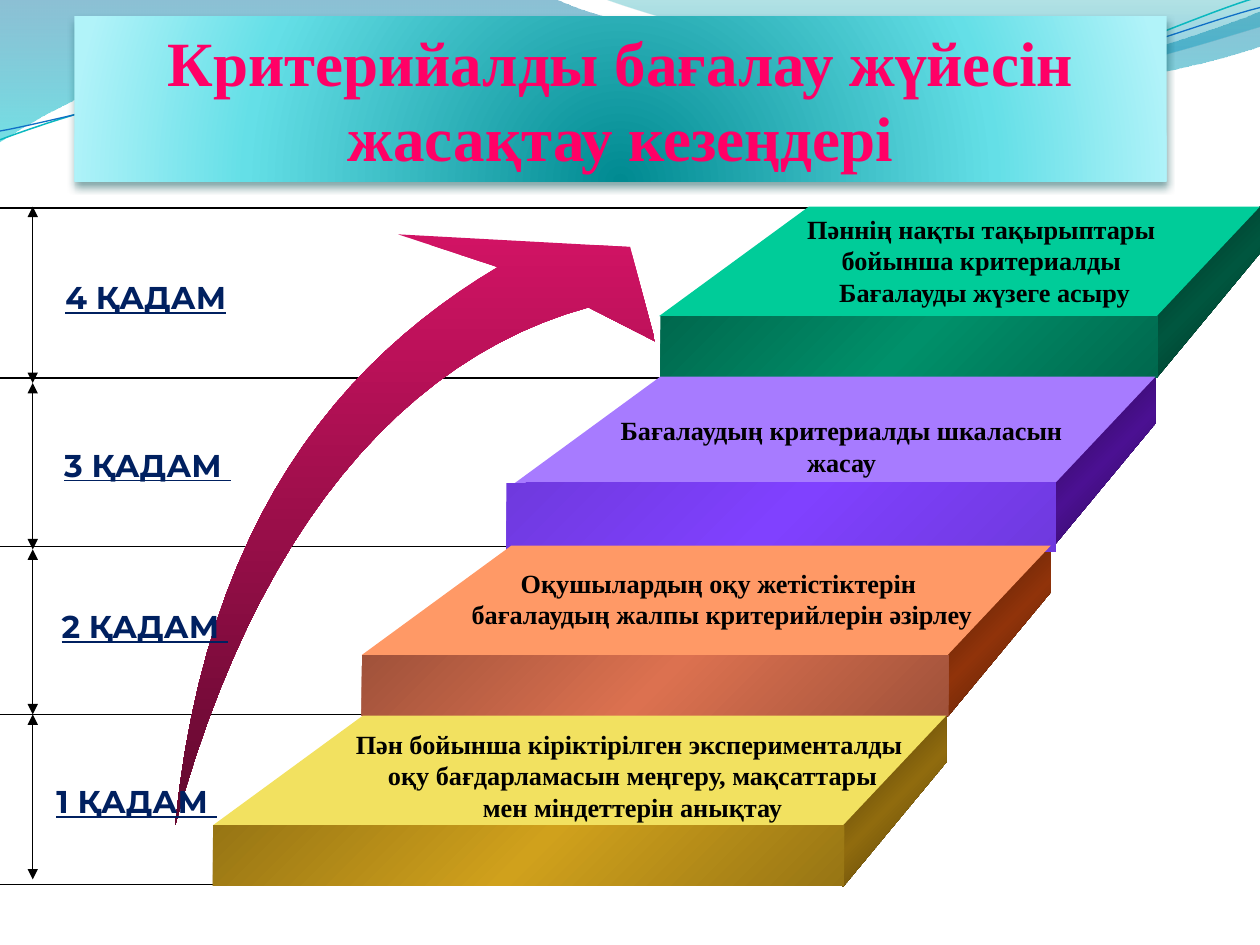
import pptx
import pptx.util
import pptx.dml.color
import pptx.enum.shapes
import pptx.enum.text
import pptx.oxml
import pptx.oxml.ns
from pptx.util import Inches

# ---- Content -------------------------------------------------------------
TITLE = "Критерийалды бағалау жүйесін жасақтау кезеңдері"
PANEL = (0.59, 0.13, 8.67, 1.31)

# From the highest step down: y is its back edge, box its front face,
# tag and note the places of its name and text
STEPS = [
    {"y": 1.64, "hue": "green", "box": (5.24, 2.51, 3.95, 0.49),
     "name": "4 ҚАДАМ", "tag": (0.42, 2.16, 1.59, 0.71),
     "note": (5.55, 1.64, 4.53, 0.86),
     "text": ["Пәннің нақты тақырыптары ", "бойынша критериалды ",
              "Бағалауды жүзеге асыру"]},
    {"y": 2.99, "hue": "violet", "box": (4.02, 3.83, 4.36, 0.55),
     "name": "3 ҚАДАМ ", "tag": (0.41, 3.49, 1.68, 0.71),
     "note": (4.65, 3.24, 4.06, 0.61),
     "text": ["Бағалаудың критериалды шкаласын жасау"]},
    {"y": 4.33, "hue": "orange", "box": (2.87, 5.2, 4.66, 0.48),
     "name": "2 ҚАДАМ ", "tag": (0.39, 4.77, 1.77, 0.4),
     "note": (3.23, 4.45, 5, 0.61),
     "text": ["Оқушылардың оқу жетістіктерін ",
              "бағалаудың жалпы критерийлерін әзірлеу"]},
    {"y": 5.68, "hue": "yellow", "box": (1.69, 6.55, 5.01, 0.48),
     "name": "1 ҚАДАМ ", "tag": (0.35, 6.16, 1.54, 0.4),
     "note": (2.3, 5.73, 5.39, 0.86),
     "text": ["Пән бойынша кіріктірілген эксперименталды",
              " оқу бағдарламасын меңгеру, мақсаттары",
              " мен міндеттерін анықтау"]},
]

# ---- Look: gradient stops are (place, colour, opacity) -------------------
THEME = {
    "head": ("Times New Roman", 36, "FF0066"),
    "body": ("Times New Roman", 15, "000000"),
    "step": ("Montserrat", 18, "002060"),
    "line": ("000000", 0.75),
    "edge": "00A578",
    "shade": "024B4E",
    "panel": [(0, "008A91"), (68, "64DFE7"), (100, "B1F3F9")],
    "arrow": [(0, "D11364"), (100, "61092E")],
    "left wave": [(0, "0074A1", 45), (100, "00C6CF", 55)],
    "right wave": [(0, "00A1A9", 30), (80, "008BBF", 45)],
    "cyan thread": ("0AB8BF", 0.85),
    "blue thread": ("0F6FC6", 0.75),
    # top, then dark and light of the side, then of the front
    "green": ("00CC99", ("00281D", "00563F"), ("00684D", "00906A")),
    "violet": ("A77BFF", ("230744", "4B1092"), ("6F39DE", "8041FF")),
    "orange": ("FF9966", ("431805", "90330A"), ("A0523A", "DC7150")),
    "yellow": ("F2E160", ("433206", "906B0E"), ("977514", "D0A11C")),
}

# ---- Stair geometry: each step down moves its corners left ---------------
LEFT, LEFT_MOVE = 5.23, 1.18     # front left corner of the top face
RIGHT, RIGHT_MOVE = 9.18, 0.83   # front right corner of the top face
DEPTH = 0.87                     # from the back edge to the front edge
LEAN_LEFT, LEAN_RIGHT = 1.19, 0.82
THICK_BACK, THICK_FRONT = 0.37, 0.49
SCALE_X = 0.26
RULES = [1.65, 3, 4.34, 5.67, 7.02]
SPANS = [1.64, 3.04, 4.36, 5.67, 6.98]

# ---- Outlines: two numbers make a corner, six make a Bezier curve --------
WAVES = {
    "left wave": [
        (0, 0), (4.4, -0.01), (4.76, 0.17, 6.64, 0.63, 7.58, 0.63),
        (8.53, 0.63, 9.58, 0.26, 10, 0.09), (10.01, 0.36),
        (9.83, 0.44, 8.7, 0.76, 7.46, 0.75),
        (6.22, 0.75, 3.82, 0.28, 2.57, 0.34),
        (1.29, 0.36, 0.46, 0.83, -0.01, 1.13)],
    "right wave": [
        (4.79, -0.01), (5.09, 0.11, 6.82, 0.62, 7.69, 0.65),
        (8.56, 0.69, 9.61, 0.32, 10, 0.21), (10, 0)],
}
THREADS = {
    "cyan thread": [
        (0, 1.11), (0.48, 0.93, 1.58, 0.57, 2.77, 0.52),
        (3.95, 0.47, 5.93, 0.89, 7.13, 0.8),
        (8.33, 0.71, 9.38, 0.15, 9.98, -0.02)],
    "blue thread": [
        (0, 1.04), (0.47, 0.96, 1.64, 0.61, 2.83, 0.56),
        (4.03, 0.51, 5.97, 0.84, 7.17, 0.75),
        (8.36, 0.67, 9.41, 0.21, 10, 0.06)],
}
TAIL = (1.39, 6.55)
OUTER = (1.63, 4.13, 2.7, 2.87, 3.95, 2.12)
HEAD = [(3.16, 1.86), (5, 1.96), (5.2, 2.71), (4.67, 2.44)]
INNER = (3.2, 2.84, 2.02, 4.22, *TAIL)
ARROW = [TAIL, OUTER, *HEAD, INNER]

ALIGN = pptx.enum.text.PP_ALIGN
qn = pptx.oxml.ns.qn


def rgb(code):
    return pptx.dml.color.RGBColor.from_string(code)


def node(tag, attrs="", inner=""):
    """Make one element of the drawing namespace."""
    space = pptx.oxml.ns.nsdecls("a")
    return pptx.oxml.parse_xml(f"<a:{tag} {space} {attrs}>{inner}</a:{tag}>")


def tint(code, clear=100):
    return (f'<a:srgbClr val="{code}"><a:alpha val="{clear * 1000}"/>'
            '</a:srgbClr>')


def grade(shape, stops, mode):
    """Fill with gradient stops; mode is the XML of the direction."""
    marks = "".join(f'<a:gs pos="{spot * 1000}">{tint(*look)}</a:gs>'
                    for spot, *look in stops)
    shape.fill.gradient()
    props = shape.element.spPr
    props.replace(props.find(qn("a:gradFill")),
                  node("gradFill", 'rotWithShape="1"',
                       f"<a:gsLst>{marks}</a:gsLst>{mode}"))


def slant(shape, stops, angle):
    grade(shape, stops, f'<a:lin ang="{angle * 60000}" scaled="1"/>')


def sheen(shape, dark, light):
    slant(shape, [(0, dark), (50, light), (100, dark)], 45)


def stroke(line, code, width):
    line.color.rgb = rgb(code)
    line.width = pptx.util.Pt(width)


def plain(shape):
    shape.shadow.inherit = False
    shape.line.fill.background()
    return shape


def bend(knots, count=24):
    """Points along a cubic Bezier curve, without its start."""
    for k in range(1, count + 1):
        t = k / count
        s = 1 - t
        mix = (s ** 3, 3 * s * s * t, 3 * s * t * t, t ** 3)
        yield tuple(sum(m * v for m, v in zip(mix, axis))
                    for axis in zip(*knots))


def trace(path):
    """Turn corners and curves into a list of points."""
    points = [path[0]]
    for part in path[1:]:
        if len(part) == 2:
            points.append(part)
        else:
            points += bend([points[-1], part[:2], part[2:4], part[4:]])
    return points


def draw(shapes, path, close=True):
    first, *rest = [(Inches(x), Inches(y)) for x, y in trace(path)]
    pen = shapes.build_freeform(*first)
    pen.add_line_segments(rest, close=close)
    return plain(pen.convert_to_shape())


def rule(shapes, x1, y1, x2, y2, heads=()):
    link = shapes.add_connector(pptx.enum.shapes.MSO_CONNECTOR.STRAIGHT,
                                *map(Inches, (x1, y1, x2, y2)))
    stroke(link.line, *THEME["line"])
    props = link.element.spPr
    props.append(node("effectLst"))
    for end in heads:
        props.find(qn("a:ln")).append(node(end, 'type="triangle"'))


def write(shape, lines, style, align):
    font, size, ink = THEME[style]
    frame = shape.text_frame
    frame.text = "\n".join(lines)
    frame.word_wrap = True
    frame.auto_size = pptx.enum.text.MSO_AUTO_SIZE.SHAPE_TO_FIT_TEXT
    for para in frame.paragraphs:
        para.alignment = align
        for run in para.runs:
            face = run.font
            face.name, face.size, face.bold = font, pptx.util.Pt(size), True
            face.color.rgb = rgb(ink)
            face.underline = True if style == "step" else None


def add_waves(shapes):
    for name, path in WAVES.items():
        slant(draw(shapes, path), THEME[name], 90)
    for name, path in THREADS.items():
        thread = draw(shapes, path, close=False)
        thread.fill.background()
        stroke(thread.line, *THEME[name])


def add_sides(shapes):
    for i, step in enumerate(STEPS):
        back, front = step["y"], step["y"] + DEPTH
        x = RIGHT - RIGHT_MOVE * i
        side = draw(shapes, [(x + LEAN_RIGHT, back),
                             (x + LEAN_RIGHT, back + THICK_BACK),
                             (x, front + THICK_FRONT), (x, front)])
        sheen(side, *THEME[step["hue"]][1])


def add_scale(shapes):
    for i, y in enumerate(RULES):
        rule(shapes, LEFT + LEAN_LEFT - LEFT_MOVE * i, y, 0, y)
    for start, stop in zip(SPANS, SPANS[1:]):
        rule(shapes, SCALE_X, start, SCALE_X, stop, ("headEnd", "tailEnd"))


def add_faces(shapes):
    for i, step in enumerate(STEPS):
        left, right = LEFT - LEFT_MOVE * i, RIGHT - RIGHT_MOVE * i
        back, front = step["y"], step["y"] + DEPTH
        color, _, pair = THEME[step["hue"]]
        top = draw(shapes, [(right, front), (left, front),
                            (left + LEAN_LEFT, back),
                            (right + LEAN_RIGHT, back)])
        top.fill.solid()
        top.fill.fore_color.rgb = rgb(color)
        face = shapes.add_shape(pptx.enum.shapes.MSO_SHAPE.RECTANGLE,
                                *map(Inches, step["box"]))
        sheen(plain(face), *pair)


def add_labels(shapes):
    for step in STEPS:
        tag = shapes.add_textbox(*map(Inches, step["tag"]))
        write(tag, [step["name"]], "step", ALIGN.LEFT)
        for look in tag.element.iter(qn("a:rPr")):
            fill = f'<a:solidFill>{tint(THEME["edge"])}</a:solidFill>'
            look.insert(0, node("ln", 'w="9000"', fill))
        note = shapes.add_textbox(*map(Inches, step["note"]))
        write(note, step["text"], "body", ALIGN.CENTER)


def add_title(title):
    title.left, title.top, title.width, title.height = map(Inches, PANEL)
    write(title, [TITLE], "head", ALIGN.CENTER)
    grade(title, THEME["panel"],
          '<a:path path="circle"><a:fillToRect l="50000" t="130000" '
          'r="50000" b="-30000"/></a:path>')
    shade = ('<a:outerShdw blurRad="57150" dist="38100" dir="5400000">'
             f'{tint(THEME["shade"], 48)}</a:outerShdw>')
    title.element.spPr.append(node("effectLst", inner=shade))
    title.element.getparent().append(title.element)  # bring to the front


def main():
    deck = pptx.Presentation()
    deck.slide_width, deck.slide_height = Inches(10), Inches(7.5)
    shapes = deck.slides.add_slide(deck.slide_layouts[5]).shapes
    add_waves(shapes)
    add_sides(shapes)
    add_scale(shapes)
    slant(draw(shapes, ARROW), THEME["arrow"], 90)
    add_faces(shapes)
    add_labels(shapes)
    add_title(shapes.title)
    deck.save("out.pptx")


if __name__ == "__main__":
    main()
